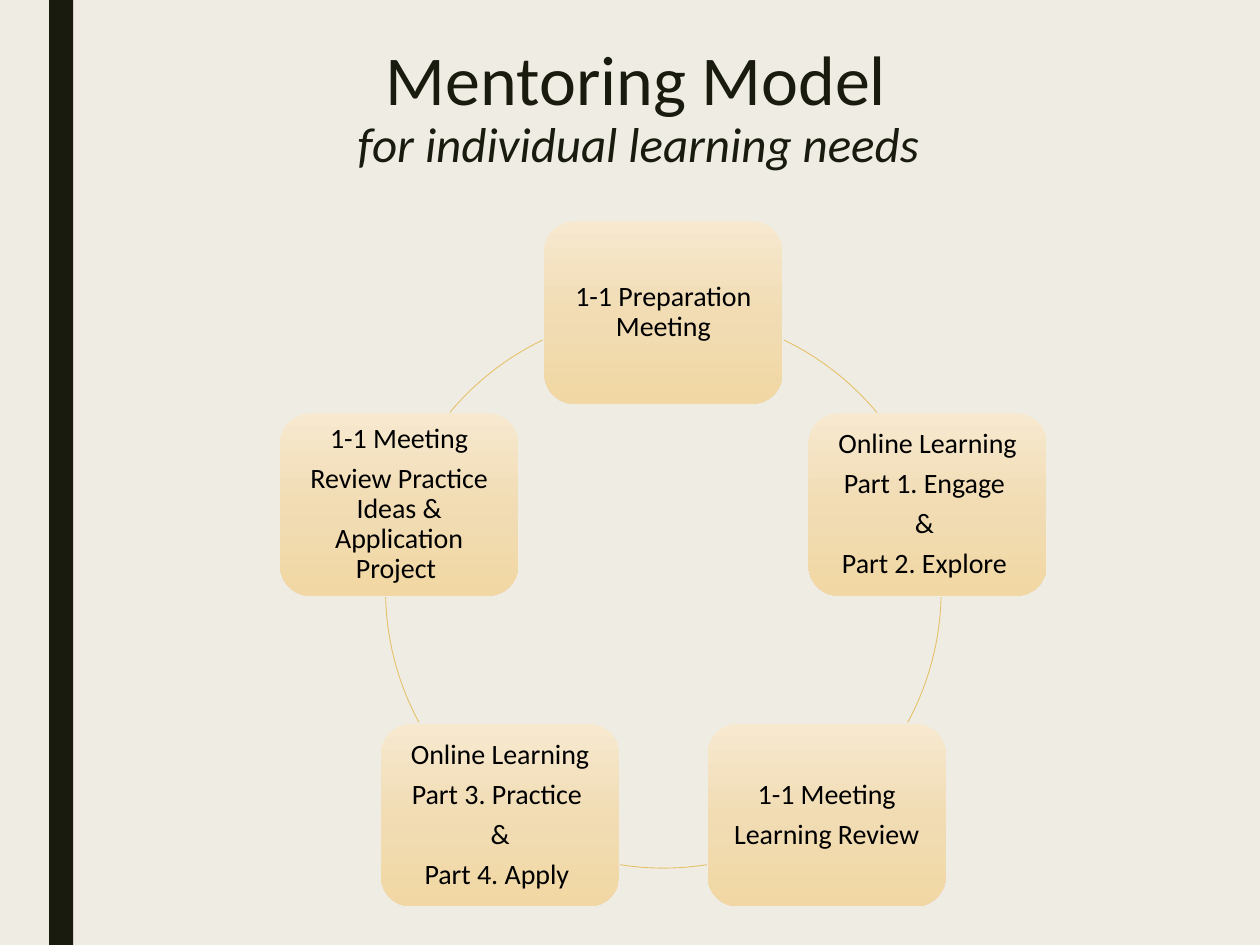
from copy import deepcopy
from math import cos, radians, sin

from pptx import Presentation
from pptx import util as u
from pptx.dml.color import RGBColor
from pptx.enum import shapes, text

THEME = {
    "font": "Calibri",
    "background": "EFEDE3", "dark": "191B0E", "label": "000000", "ring": "E6C069",
    "gradient": [(0, "F7E9D0"), (0.5, "F1DCB4"), (1, "F1D7A3")],
    "title_size": 40, "subtitle_size": 28, "label_size": 16,
}

deck = Presentation()
deck.slide_width, deck.slide_height = u.Inches(10), u.Inches(7.5)
cell = deck.slide_width / 100  # square grid: 100 columns by 75 rows


def grid(*lengths):
    """Turn columns and rows into slide lengths."""
    return [u.Emu(round(length * cell)) for length in lengths]


def write(para, words, size, color, italic=None, spacing=0.9, after=0):
    """Add a formatted, centred span to a paragraph."""
    para.alignment = text.PP_ALIGN.CENTER
    para.line_spacing, para.space_after = spacing, u.Pt(after)
    span = para.add_run()
    span.text = words
    span.font.name, span.font.size, span.font.italic = THEME["font"], u.Pt(size), italic
    span.font.color.rgb = RGBColor.from_string(color)


# Page and side bar
page = deck.slides.add_slide(deck.slide_layouts[5])
page.background.fill.solid()
page.background.fill.fore_color.rgb = RGBColor.from_string(THEME["background"])
bar = page.shapes.add_shape(shapes.MSO_SHAPE.RECTANGLE, *grid(3.9, 0, 1.9, 75))
bar.shadow.inherit = False
bar.fill.solid()
bar.fill.fore_color.rgb = RGBColor.from_string(THEME["dark"])
bar.line.fill.background()

# Title and subtitle
title = page.shapes.title
title.left, title.top, title.width, title.height = grid(11.7, 2.4, 78.8, 12.5)
title.text_frame.auto_size = text.MSO_AUTO_SIZE.NONE
title.text_frame.vertical_anchor = text.MSO_ANCHOR.MIDDLE
heading = title.text_frame.paragraphs[0]
write(heading, "Mentoring Model ", THEME["title_size"], THEME["dark"], spacing=0.89)
heading.add_line_break()
write(heading, "for individual learning needs ", THEME["subtitle_size"], THEME["dark"],
      italic=True, spacing=0.89)

# Cycle: five steps clockwise from the top, each with the arc that follows it
center_x, center_y, radius = 52.65, 46.85, 22.05
box_width, box_height = 18.9, 14.5
steps = [
    (["1-1 Preparation Meeting"], (295.7, 320.2)),
    (["Online Learning", "Part 1. Engage ", "& ", "Part 2. Explore "], (1.4, 28.4)),
    (["1-1 Meeting", "Learning Review"], (81, 99)),
    (["Online Learning", "Part 3. Practice ", "&", "Part 4. Apply "], (151.6, 178.6)),
    (["1-1 Meeting", "Review Practice Ideas & Application Project "], (219.8, 244.3)),
]
for number, (lines, arc_angles) in enumerate(steps):
    angle = radians(number * 360 / len(steps) - 90)
    box = page.shapes.add_shape(
        shapes.MSO_SHAPE.ROUNDED_RECTANGLE,
        *grid(center_x + radius * cos(angle) - box_width / 2,
              center_y + radius * sin(angle) - box_height / 2, box_width, box_height))
    box.shadow.inherit = False
    box.line.fill.background()

    # Three-stop gradient, light at the top
    box.fill.gradient()
    box.fill.gradient_angle = 270
    first_stop = box.fill._fill._gradFill.gsLst[0]
    first_stop.addnext(deepcopy(first_stop))
    for stop, (position, color) in zip(box.fill.gradient_stops, THEME["gradient"]):
        stop.position = position
        stop.color.rgb = RGBColor.from_string(color)

    # Step label
    frame = box.text_frame
    frame.word_wrap = True
    frame.vertical_anchor = text.MSO_ANCHOR.MIDDLE
    frame.margin_left = frame.margin_right = u.Inches(0.07)
    frame.margin_top = frame.margin_bottom = u.Inches(0.07)
    for index, words in enumerate(lines):
        para = frame.add_paragraph() if index else frame.paragraphs[0]
        write(para, words, THEME["label_size"], THEME["label"], after=5.6)

    # Arc to the next step; an adjustment of 0.6 is one degree
    arc = page.shapes.add_shape(
        shapes.MSO_SHAPE.ARC,
        *grid(center_x - radius, center_y - radius, 2 * radius, 2 * radius))
    arc.shadow.inherit = False
    arc.fill.background()
    arc.line.color.rgb = RGBColor.from_string(THEME["ring"])
    arc.line.width = u.Pt(0.5)
    for index, degrees in enumerate(arc_angles):
        arc.adjustments[index] = degrees * 0.6

deck.save("out.pptx")
